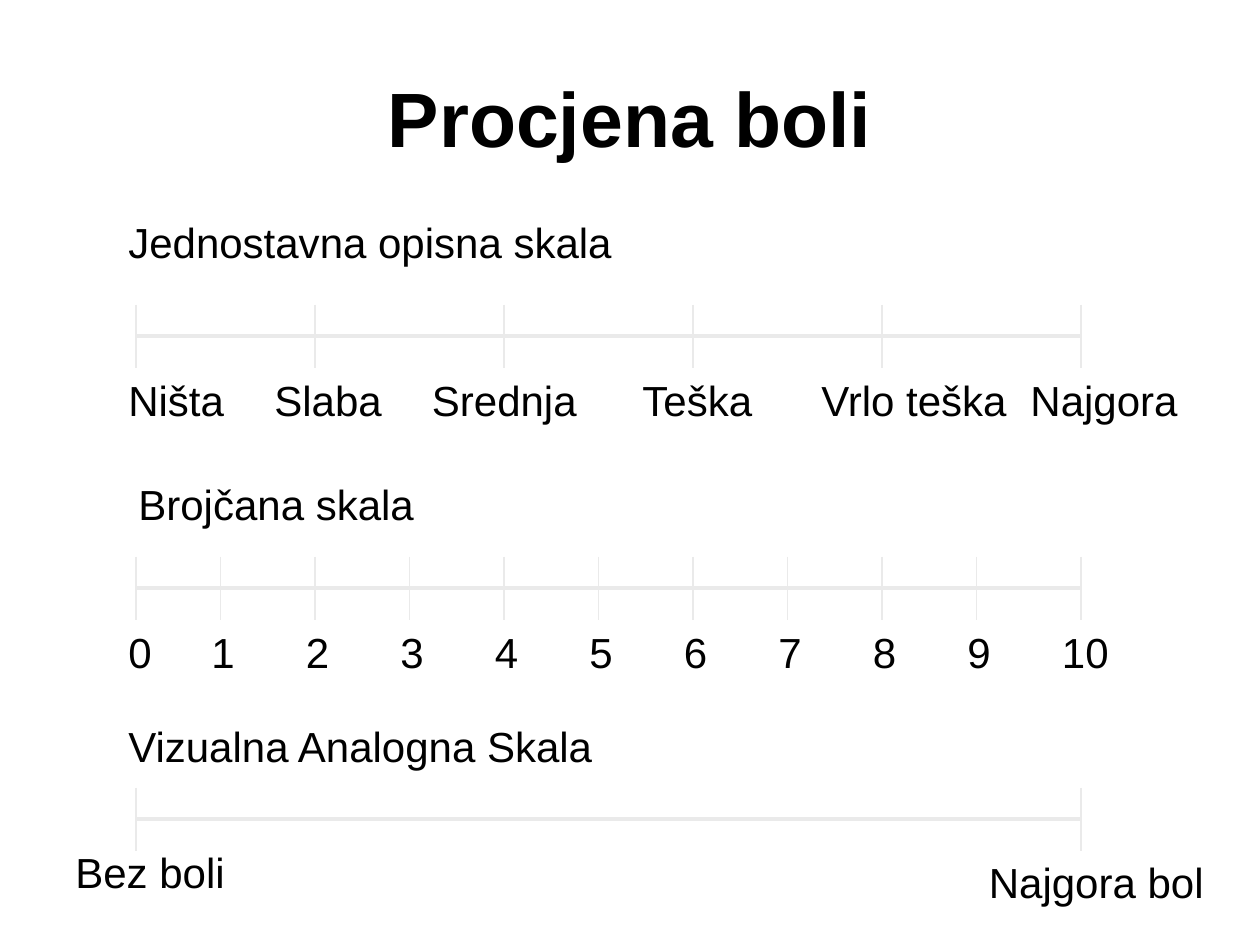
import pptx
import pptx.util
import pptx.dml.color
import pptx.enum.shapes
import pptx.enum.text
import pptx.oxml.ns
import lxml.etree

Inches = pptx.util.Inches
COLORS = {"text": "000000", "scale": "EAEAEA"}
FONT = "Arial"

TITLE = "Procjena boli"
HEADINGS = [
    ("Jednostavna opisna skala", 0.92, 1.67, 4.08),
    ("Brojčana skala", 1, 3.75, 2.41),
    ("Vizualna Analogna Skala", 0.92, 5.67, 3.93),
]
DESCRIPTIONS = [
    ("Ništa", 0.92, 0.97),
    ("Slaba", 2.08, 1.06),
    ("Srednja", 3.33, 1.36),
    ("Teška", 5, 1.08),
    ("Vrlo teška", 6.42, 1.69),
    ("Najgora", 8.08, 1.38),
]
EXTREMES = [("Bez boli", 0.5, 6.67, 1.4), ("Najgora bol", 7.75, 6.75, 1.93)]
SCALES = [
    (2.67, range(0, 11, 2)),
    (4.67, range(11)),
    (6.5, (0, 10)),
]
SCALE_ENDS = {0: 1.08, 10: 8.58}
STEP = 0.75
HALF_TICK = 0.25


def add_text(page, text, left, top, width, height=0.5, size=24, bold=False,
             wrap=False, align=pptx.enum.text.PP_ALIGN.LEFT,
             anchor=pptx.enum.text.MSO_ANCHOR.TOP):
    box = page.shapes.add_textbox(Inches(left), Inches(top), Inches(width), Inches(height))
    frame = box.text_frame
    frame.word_wrap = wrap
    frame.vertical_anchor = anchor
    if not wrap:
        frame.auto_size = pptx.enum.text.MSO_AUTO_SIZE.SHAPE_TO_FIT_TEXT
    para = frame.paragraphs[0]
    para.alignment = align
    span = para.add_run()
    span.text = text
    span.font.name = FONT
    span.font.size = pptx.util.Pt(size)
    span.font.bold = bold
    span.font.color.rgb = pptx.dml.color.RGBColor.from_string(COLORS["text"])


def add_line(group, start, end, weight):
    line = group.shapes.add_connector(
        pptx.enum.shapes.MSO_CONNECTOR.STRAIGHT, *map(Inches, start + end))
    line.line.width = pptx.util.Pt(weight)
    line.line.color.rgb = pptx.dml.color.RGBColor.from_string(COLORS["scale"])
    lxml.etree.SubElement(line._element.spPr, pptx.oxml.ns.qn("a:effectLst"))


def add_scale(page, middle, values):
    group = page.shapes.add_group_shape()
    add_line(group, (SCALE_ENDS[0], middle), (SCALE_ENDS[10], middle), 2.25)
    for value in values:
        x = SCALE_ENDS.get(value, 1 + STEP * value)
        weight = 1 if value % 2 else 1.5
        add_line(group, (x, middle - HALF_TICK), (x, middle + HALF_TICK), weight)


def main():
    deck = pptx.Presentation()
    deck.slide_width, deck.slide_height = Inches(10), Inches(7.5)
    page = deck.slides.add_slide(deck.slide_layouts[6])

    add_text(page, TITLE, 0.5, 0.3, 9, height=1.25, size=44, bold=True, wrap=True,
             align=pptx.enum.text.PP_ALIGN.CENTER,
             anchor=pptx.enum.text.MSO_ANCHOR.MIDDLE)
    for text, left, top, width in HEADINGS:
        add_text(page, text, left, top, width)
    for middle, values in SCALES:
        add_scale(page, middle, values)
    for value in range(11):
        left = 0.83 + STEP * value if value else 0.92
        add_text(page, str(value), left, 4.92, 0.58 if value == 10 else 0.39)
    for text, left, top, width in EXTREMES:
        add_text(page, text, left, top, width)
    for text, left, width in DESCRIPTIONS:
        add_text(page, text, left, 2.92, width)

    deck.save("out.pptx")


if __name__ == "__main__":
    main()
